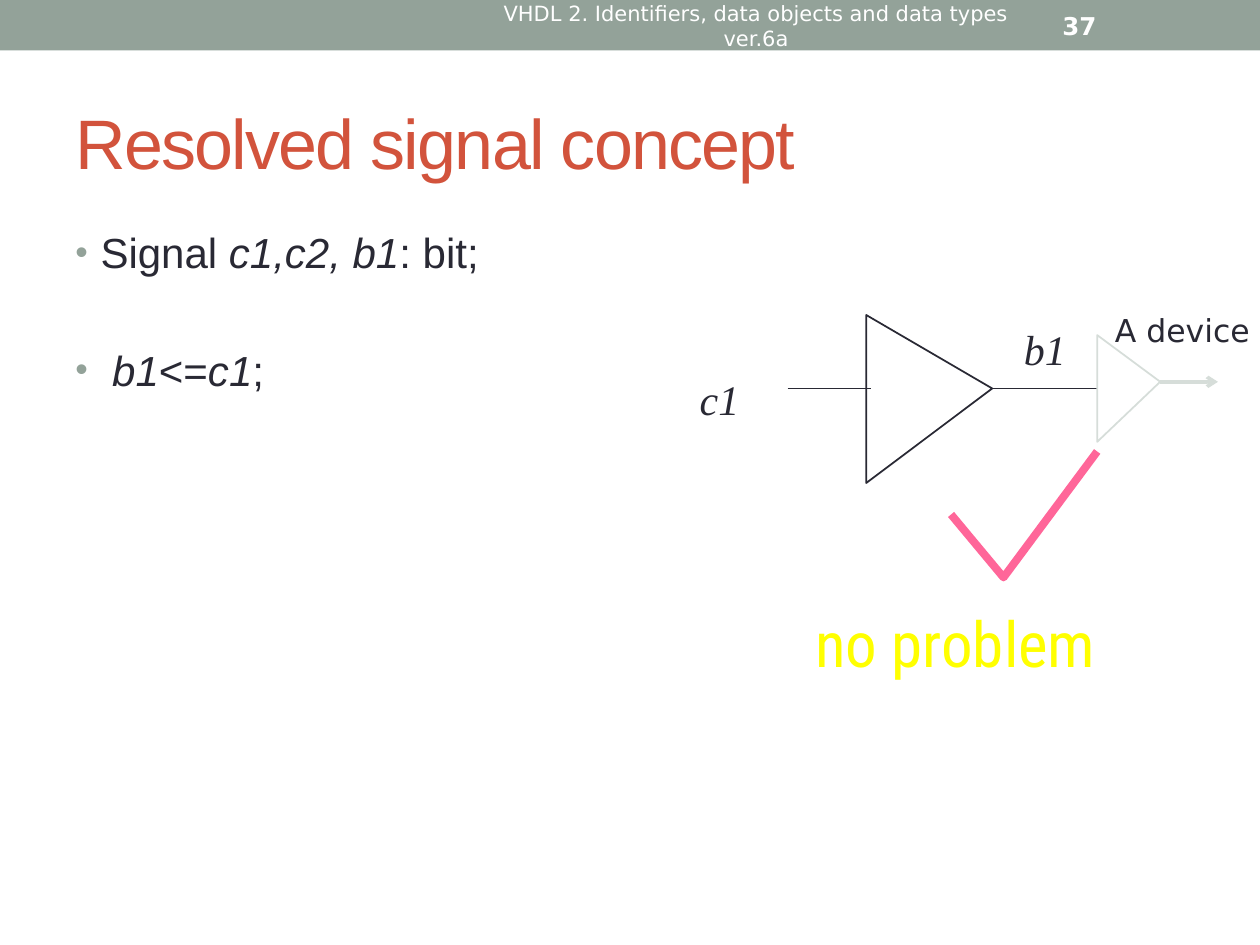
from dataclasses import dataclass

from lxml import etree
from pptx import Presentation
from pptx.dml.color import RGBColor
from pptx.enum.shapes import MSO_CONNECTOR, MSO_SHAPE
from pptx.enum.text import MSO_ANCHOR, MSO_AUTO_SIZE, PP_ALIGN
from pptx.oxml.ns import qn
from pptx.util import Pt

STRAIGHT = MSO_CONNECTOR.STRAIGHT
RECTANGLE = MSO_SHAPE.RECTANGLE
TOP, MIDDLE = MSO_ANCHOR.TOP, MSO_ANCHOR.MIDDLE
LEFT, CENTER = PP_ALIGN.LEFT, PP_ALIGN.CENTER
GROW = MSO_AUTO_SIZE.SHAPE_TO_FIT_TEXT


@dataclass(frozen=True)
class Theme:
    ink: str = "292934"
    sage: str = "93A299"
    pale: str = "D6DDD9"
    red: str = "D2533C"
    white: str = "FFFFFF"
    yellow: str = "FFFF00"
    pink: str = "FF6699"
    sans: str = "Arial"
    interface: str = "DejaVu Sans"
    serif: str = "Times New Roman"
    condensed: str = "Roboto Condensed"
    title: int = 40
    banner: int = 36
    body: int = 24
    label: int = 18
    number: int = 14
    footer: int = 12


class SlideBuilder:
    """Draw styled elements on one slide, with all lengths in points."""

    def __init__(self, presentation, theme):
        self.theme = theme
        self.slide = presentation.slides.add_slide(presentation.slide_layouts[6])
        self.shapes = self.slide.shapes

    def bar(self, box, color):
        shape = self.shapes.add_shape(RECTANGLE, *map(Pt, box))
        shape.shadow.inherit = False
        shape.fill.solid()
        shape.fill.fore_color.rgb = RGBColor.from_string(color)
        shape.line.fill.background()

    def run(self, paragraph, text, color, **formats):
        run = paragraph.add_run()
        run.text = text
        for name, value in formats.items():
            setattr(run.font, name, value)
        run.font.color.rgb = RGBColor.from_string(color)
        return run

    def frame(self, box, anchor=TOP, wrap=True, inset=7.2):
        frame = self.shapes.add_textbox(*map(Pt, box)).text_frame
        frame.word_wrap = wrap
        frame.vertical_anchor = anchor
        frame.margin_left = frame.margin_right = Pt(inset)
        return frame

    def text(self, box, text, size, font, color, align=LEFT, anchor=TOP,
             wrap=True, inset=7.2, grow=False, spacing=0, **formats):
        frame = self.frame(box, anchor, wrap, inset)
        if grow:
            frame.auto_size = GROW
        paragraph = frame.paragraphs[0]
        paragraph.alignment = align
        run = self.run(paragraph, text, color, size=Pt(size), name=font, **formats)
        if spacing:
            run.font._element.set("spc", str(spacing * 100))

    def bullets(self, box, items):
        frame = self.frame(box)
        for index, (space_before, runs) in enumerate(items):
            paragraph = frame.add_paragraph() if index else frame.paragraphs[0]
            paragraph.space_before = Pt(space_before)
            for text, italic in runs:
                self.run(paragraph, text, self.theme.ink, italic=italic,
                         size=Pt(self.theme.body), name=self.theme.sans)
            properties = paragraph._p.get_or_add_pPr()
            properties.set("marL", str(Pt(14.4)))
            properties.set("indent", str(-Pt(14.4)))
            color = etree.SubElement(properties, qn("a:buClr"))
            etree.SubElement(color, qn("a:srgbClr"), val=self.theme.sage)
            etree.SubElement(properties, qn("a:buSzPct"), val="85000")
            etree.SubElement(properties, qn("a:buFont"), typeface=self.theme.sans)
            etree.SubElement(properties, qn("a:buChar"), char="•")

    def outline(self, points, color, width, close=True):
        first, *others = [tuple(map(Pt, point)) for point in points]
        builder = self.shapes.build_freeform(*first)
        builder.add_line_segments(others, close=close)
        shape = builder.convert_to_shape()
        shape.shadow.inherit = False
        shape.fill.background()
        self.stroke(shape, color, width)

    def wire(self, start, end, color, width, arrow=False):
        connector = self.shapes.add_connector(STRAIGHT, *map(Pt, start + end))
        self.stroke(connector, color, width)
        if arrow:
            etree.SubElement(connector.line._get_or_add_ln(), qn("a:tailEnd"), type="arrow")
        etree.SubElement(connector._element.spPr, qn("a:effectLst"))

    def stroke(self, shape, color, width):
        shape.line.color.rgb = RGBColor.from_string(color)
        shape.line.width = Pt(width)


def main():
    theme = Theme()
    presentation = Presentation()
    presentation.slide_width, presentation.slide_height = Pt(720), Pt(540)
    builder = SlideBuilder(presentation, theme)

    builder.bar((0, 0, 720, 28.8), theme.sage)
    builder.text((36, 42, 648, 78), "Resolved signal concept", theme.title,
                 theme.sans, theme.red, anchor=MIDDLE, spacing=-1)
    builder.bullets((36, 126, 648, 384), [
        (4.8, [("Signal ", False), ("c1,c2, b1", True), (": bit;", False)]),
        (38.5, [(" b1", True), ("<=", False), ("c1", True), (";", False)]),
    ])
    builder.text((270, 1.6, 324, 26), "VHDL 2. Identifiers, data objects and data types ver.6a",
                 theme.footer, theme.interface, theme.white, CENTER, MIDDLE)
    builder.text((600, 1.6, 84, 26), "37", theme.number, theme.interface,
                 theme.white, anchor=MIDDLE, bold=True)

    buffer_tip, device_input, device_tip = (567, 222), (627, 222), (663, 218.2)
    builder.outline([(495, 180), (495, 276), buffer_tip], theme.ink, 1)
    builder.wire((450, 222), (498, 222), theme.ink, 1)
    builder.wire(buffer_tip, device_input, theme.ink, 1)
    for name, box in (("c1", (392.4, 210, 37.5, 36)), ("b1", (578, 181, 38, 36))):
        builder.text(box, name, theme.body, theme.serif, theme.ink, CENTER, MIDDLE,
                     wrap=False, inset=0, grow=True, italic=True)
    builder.text((462, 342, 168, 45), "no problem", theme.banner, theme.condensed,
                 theme.yellow, CENTER, wrap=False, inset=0)
    builder.outline([(543.5, 294), (573.5, 330), (627, 258)], theme.pink, 4.5, close=False)
    builder.outline([(627, 191.5), (627, 252.5), device_tip], theme.pale, 1)
    builder.text((630, 174, 91.5, 29), "A device", theme.label, theme.interface,
                 theme.ink, wrap=False, grow=True)
    builder.wire(device_tip, (696, 218.2), theme.pale, 2, arrow=True)

    presentation.save("out.pptx")


if __name__ == "__main__":
    main()
